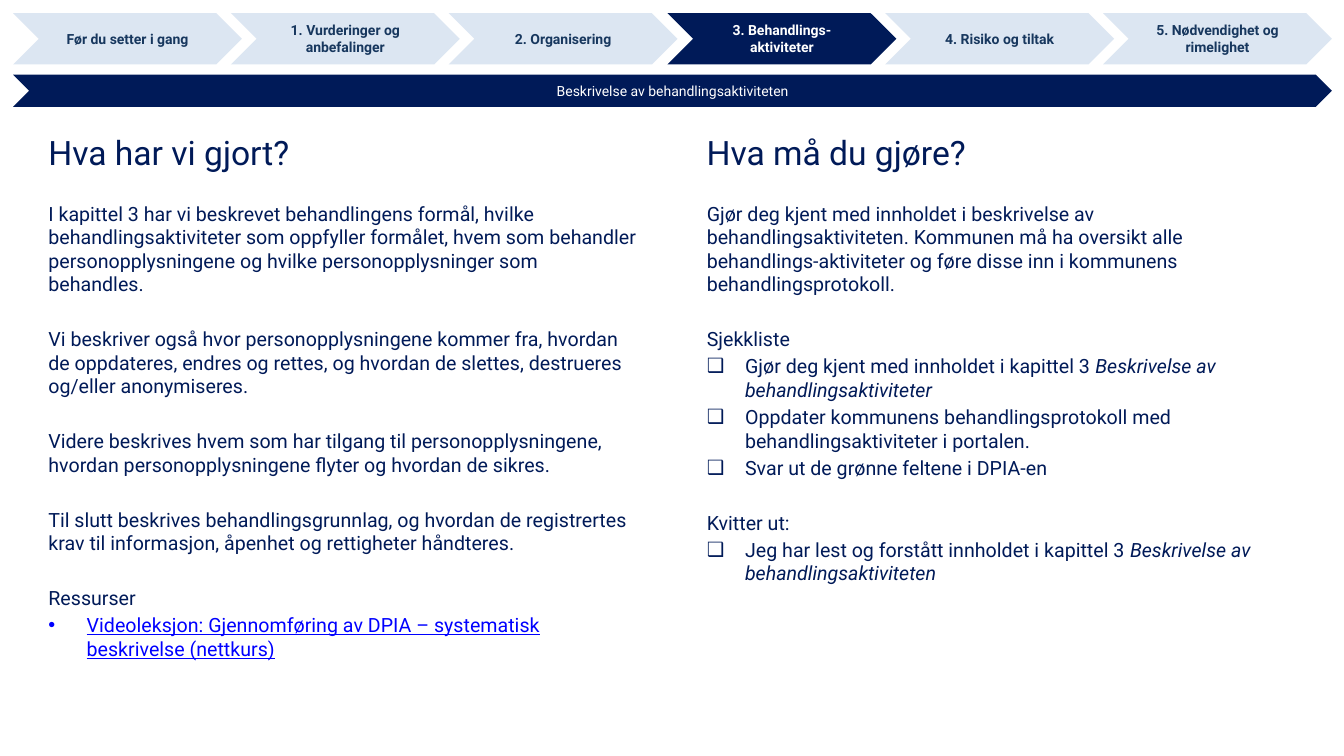
from pptx import Presentation
from pptx.dml.color import RGBColor
from pptx.enum.shapes import MSO_SHAPE
from pptx.enum.text import MSO_ANCHOR, MSO_AUTO_SIZE, PP_ALIGN
from pptx.oxml.ns import qn
from pptx.util import Emu, Pt
from lxml.etree import SubElement

PX = 9144
FONT = "Roboto"
COLORS = {"navy": "001A58", "pale": "DCE6F2", "slate": "17375E", "white": "FFFFFF", "link": "0000FF"}
LEFT, RIGHT, COLUMN_W = 38, 691, 604
STEP_W, STEP_SPAN = 227, 1081
INDENT = 38
STEPS = ["Før du setter i gang", "1. Vurderinger og anbefalinger", "2. Organisering",
         "3. Behandlings-aktiviteter", "4. Risiko og tiltak", "5. Nødvendighet og rimelighet"]
ACTIVE_STEP = 3
DONE = [
    ("block", "I kapittel 3 har vi beskrevet behandlingens formål, hvilke behandlingsaktiviteter som oppfyller "
              "formålet, hvem som behandler personopplysningene og hvilke personopplysninger som behandles."),
    ("block", "Vi beskriver også hvor personopplysningene kommer fra, hvordan de oppdateres, endres og rettes, "
              "og hvordan de slettes, destrueres og/eller anonymiseres."),
    ("block", "Videre beskrives hvem som har tilgang til personopplysningene, hvordan personopplysningene "
              "flyter og hvordan de sikres."),
    ("block", "Til slutt beskrives behandlingsgrunnlag, og hvordan de registrertes krav til informasjon, "
              "åpenhet og rettigheter håndteres."),
    ("block", "Ressurser"),
    ("link", "Videoleksjon: Gjennomføring av DPIA – systematisk beskrivelse (nettkurs)"),
]
TODO = [
    ("block", "Gjør deg kjent med innholdet i beskrivelse av behandlingsaktiviteten. Kommunen må ha oversikt "
              "alle behandlings-aktiviteter og føre disse inn i kommunens behandlingsprotokoll."),
    ("block", "Sjekkliste"),
    ("check", "Gjør deg kjent med innholdet i kapittel 3 ", "Beskrivelse av behandlingsaktiviteter"),
    ("check", "Oppdater kommunens behandlingsprotokoll med behandlingsaktiviteter i portalen."),
    ("check", "Svar ut de grønne feltene i DPIA-en"),
    ("block", "Kvitter ut:"),
    ("check", "Jeg har lest og forstått innholdet i kapittel 3 ", "Beskrivelse av behandlingsaktiviteten"),
]
BULLETS = {"link": "•", "check": "❑"}


def px(n):
    return Emu(n * PX)


def rgb(name):
    return RGBColor.from_string(COLORS[name])


def place(sp, x, y, w, h):
    sp.left, sp.top, sp.width, sp.height = px(x), px(y), px(w), px(h)


def style(r, size, color, bold=False, italic=False):
    f = r.font
    f.name, f.size, f.bold, f.italic = FONT, Pt(size), bold, italic
    f.color.rgb = rgb(color)


def add_chevron(slide, box, text, fill, color, bold):
    sp = slide.shapes.add_shape(MSO_SHAPE.CHEVRON, *map(px, box))
    sp.shadow.inherit = False
    sp.fill.solid()
    sp.fill.fore_color.rgb = rgb(fill)
    sp.line.fill.background()
    tf = sp.text_frame
    tf.text = text
    tf.vertical_anchor = MSO_ANCHOR.MIDDLE
    p = tf.paragraphs[0]
    p.alignment = PP_ALIGN.CENTER
    style(p.runs[0], 10, color, bold)


def set_heading(sp, x, text):
    place(sp, x, 121, COLUMN_W, 60)
    tf = sp.text_frame
    tf.text = text
    tf.word_wrap = True
    tf.auto_size = MSO_AUTO_SIZE.NONE
    tf.vertical_anchor = MSO_ANCHOR.MIDDLE
    p = tf.paragraphs[0]
    p.alignment = PP_ALIGN.LEFT
    style(p.runs[0], 24, "navy")


def set_bullet(p, char):
    pPr = p._p.get_or_add_pPr()
    margin = INDENT * PX if char else 0
    pPr.set("marL", str(margin))
    pPr.set("indent", str(-margin))
    if char:
        SubElement(pPr, qn("a:buFont")).set("typeface", "Arial")
        SubElement(pPr, qn("a:buChar")).set("char", char)
    else:
        SubElement(pPr, qn("a:buNone"))


def set_body(sp, x, items):
    place(sp, x, 195, COLUMN_W, 451)
    tf = sp.text_frame
    tf.auto_size = MSO_AUTO_SIZE.NONE
    for i, (kind, text, *emphasis) in enumerate(items):
        p = tf.add_paragraph() if i else tf.paragraphs[0]
        gap = 22.4 if kind == "block" else 2.6
        p.space_before = Pt(gap if i else 0)
        set_bullet(p, BULLETS.get(kind))
        for part, italic in [(text, False)] + [(t, True) for t in emphasis]:
            r = p.add_run()
            r.text = part
            style(r, 14, "link" if kind == "link" else "navy", italic=italic)
            if kind == "link":
                r.font.underline = True


def main():
    """Build the chapter 3 slide and save it."""
    prs = Presentation()
    prs.slide_width, prs.slide_height = px(1333), px(750)
    slide = prs.slides.add_slide(prs.slide_layouts[3])
    add_chevron(slide, (13, 74, 1308, 32), "Beskrivelse av behandlingsaktiviteten", "navy", "white", False)
    for i, text in enumerate(STEPS):
        x = 13 + round(i * STEP_SPAN / (len(STEPS) - 1))
        fill, color = ("navy", "white") if i == ACTIVE_STEP else ("pale", "slate")
        add_chevron(slide, (x, 13, STEP_W, 51), text, fill, color, True)
    title, done, todo = slide.placeholders
    set_heading(title, LEFT, "Hva har vi gjort?")
    set_heading(slide.shapes.add_textbox(0, 0, 0, 0), RIGHT, "Hva må du gjøre?")
    set_body(done, LEFT, DONE)
    set_body(todo, RIGHT, TODO)
    prs.save("out.pptx")


if __name__ == "__main__":
    main()
